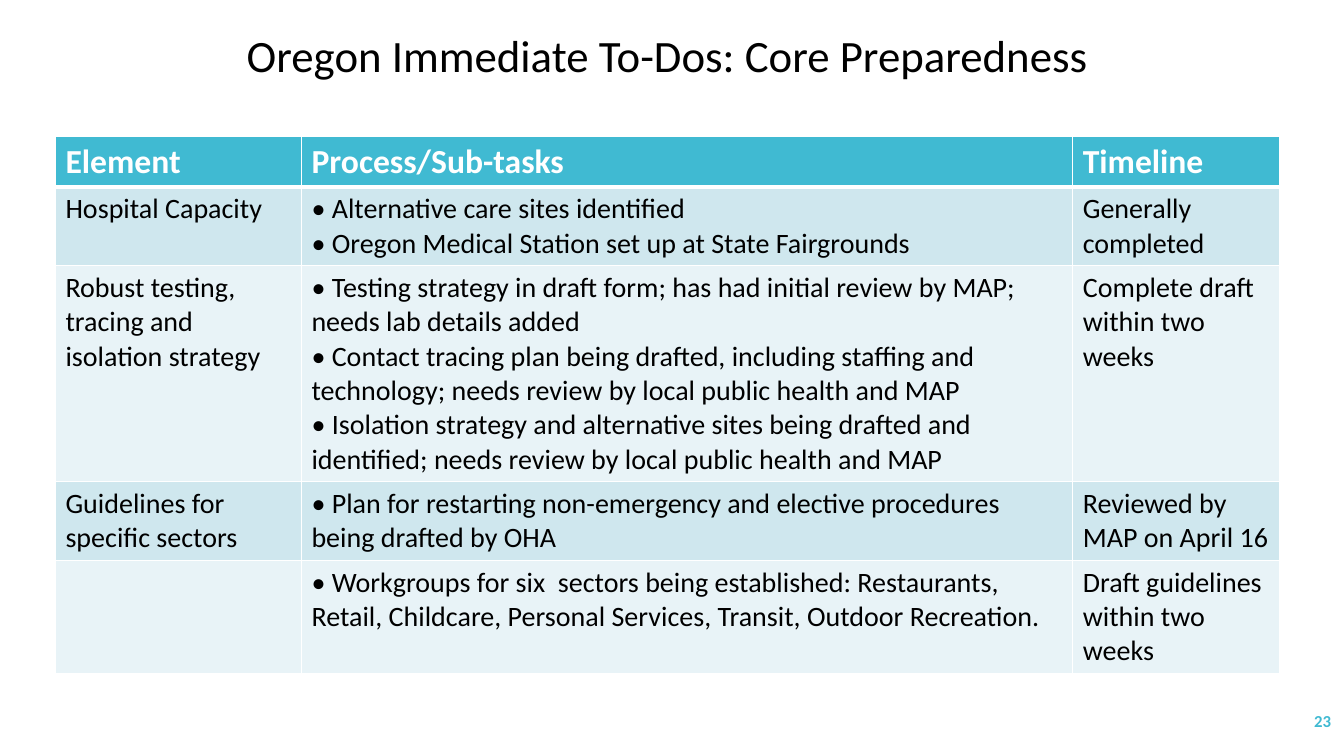
import pptx
import pptx.dml.color
import pptx.enum.text
import pptx.oxml.ns
import pptx.util
from lxml import etree

Inches = pptx.util.Inches
Pt = pptx.util.Pt
ALIGN = pptx.enum.text.PP_ALIGN
ANCHOR = pptx.enum.text.MSO_ANCHOR
qn = pptx.oxml.ns.qn

COLORS = {
    "accent": "40BAD2",
    "band_dark": "CFE7EE",
    "band_light": "E8F3F7",
    "white": "FFFFFF",
    "black": "000000",
}
COLUMN_WIDTHS = [2.44, 7.65, 2.05]
ROW_HEIGHTS = [0.48, 0.73, 2, 0.73, 1.05]
TASKS = [
    ["Element", "Process/Sub-tasks", "Timeline"],
    ["Hospital Capacity",
     "• Alternative care sites identified\n"
     "• Oregon Medical Station set up at State Fairgrounds",
     "Generally completed"],
    ["Robust testing, tracing and isolation strategy",
     "• Testing strategy in draft form; has had initial review by MAP; needs lab details added\n"
     "• Contact tracing plan being drafted, including staffing and technology; "
     "needs review by local public health and MAP\n"
     "• Isolation strategy and alternative sites being drafted and identified; "
     "needs review by local public health and MAP",
     "Complete draft within two weeks"],
    ["Guidelines for specific sectors",
     "• Plan for restarting non-emergency and elective procedures being drafted by OHA",
     "Reviewed by MAP on April 16"],
    ["",
     "• Workgroups for six  sectors being established: Restaurants, Retail, Childcare, "
     "Personal Services, Transit, Outdoor Recreation.",
     "Draft guidelines within two weeks"],
]


def write(frame, text, size, color, bold=False, align=ALIGN.LEFT):
    """Fill a text frame and format all of its paragraphs alike."""
    frame.text = text
    frame.word_wrap = True
    for paragraph in frame.paragraphs:
        paragraph.alignment = align
        for font in [paragraph.font] + [run.font for run in paragraph.runs]:
            font.name = "Calibri"
            font.size = Pt(size)
            font.bold = bold
            font.color.rgb = pptx.dml.color.RGBColor.from_string(COLORS[color])


def add_borders(cell, bottom_width):
    """Draw white cell borders, 1 pt wide except for the bottom one."""
    properties = cell._tc.get_or_add_tcPr()
    for side, width in [("lnL", 1), ("lnR", 1), ("lnT", 1), ("lnB", bottom_width)]:
        line = etree.SubElement(properties, qn(f"a:{side}"), w=str(Pt(width)))
        fill = etree.SubElement(line, qn("a:solidFill"))
        etree.SubElement(fill, qn("a:srgbClr"), val=COLORS["white"])


deck = pptx.Presentation()
deck.slide_width = Inches(13.33)
deck.slide_height = Inches(7.5)
slide = deck.slides.add_slide(deck.slide_layouts[5])

# Title
title = slide.shapes.title
title.left, title.top = Inches(1.78), Inches(0.22)
title.width, title.height = Inches(9.68), Inches(0.64)
write(title.text_frame, "Oregon Immediate To-Dos: Core Preparedness", 32, "black",
      align=ALIGN.CENTER)
title.text_frame.vertical_anchor = ANCHOR.TOP

# Task table
task_table = slide.shapes.add_table(
    len(TASKS), len(COLUMN_WIDTHS), Inches(0.55), Inches(1.35),
    Inches(sum(COLUMN_WIDTHS)), Inches(sum(ROW_HEIGHTS))).table
for column, width in zip(task_table.columns, COLUMN_WIDTHS):
    column.width = Inches(width)
for row, height in zip(task_table.rows, ROW_HEIGHTS):
    row.height = Inches(height)

for row_index, entries in enumerate(TASKS):
    is_header = row_index == 0
    if is_header:
        band, size, color = "accent", 24, "white"
    else:
        band = "band_dark" if row_index % 2 else "band_light"
        size, color = 20, "black"
    for column_index, entry in enumerate(entries):
        cell = task_table.cell(row_index, column_index)
        write(cell.text_frame, entry, size, color, bold=is_header)
        add_borders(cell, 3 if is_header else 1)
        cell.fill.solid()
        cell.fill.fore_color.rgb = pptx.dml.color.RGBColor.from_string(COLORS[band])

# Page number
page_number = slide.shapes.add_textbox(Inches(11.63), Inches(6.95), Inches(1.67), Inches(0.4))
write(page_number.text_frame, "23", 12, "accent", bold=True, align=ALIGN.RIGHT)
page_number.text_frame.vertical_anchor = ANCHOR.MIDDLE

deck.save("out.pptx")
